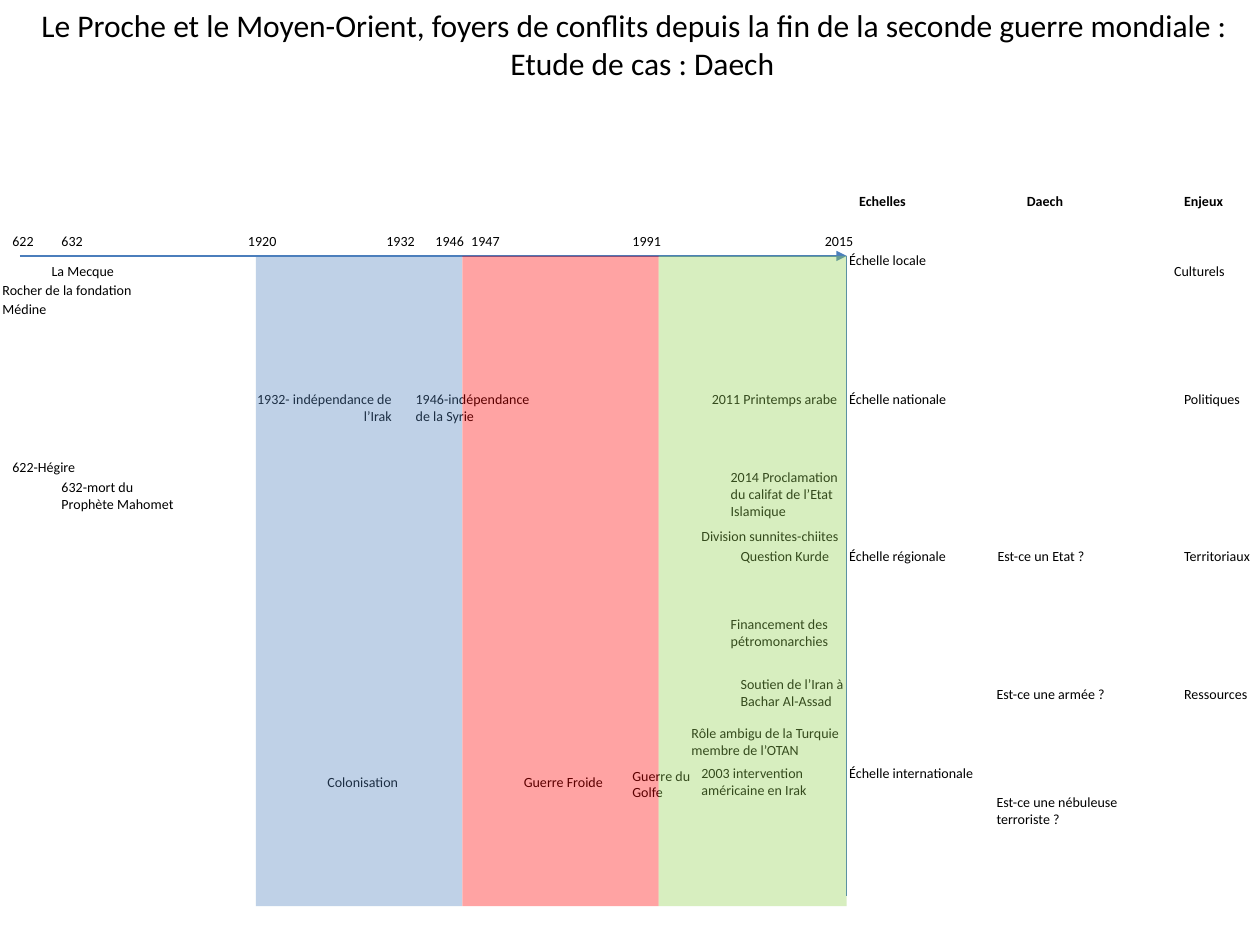
from lxml import etree
from pptx import Presentation
from pptx.dml.color import RGBColor
from pptx.enum.shapes import MSO_CONNECTOR, MSO_SHAPE
from pptx.enum.text import MSO_ANCHOR, MSO_AUTO_SIZE, PP_ALIGN
from pptx.oxml.ns import qn
from pptx.util import Cm, Pt

STRAIGHT = MSO_CONNECTOR.STRAIGHT
RECTANGLE = MSO_SHAPE.RECTANGLE
TOP = MSO_ANCHOR.TOP
FIT_SHAPE = MSO_AUTO_SIZE.SHAPE_TO_FIT_TEXT
LEFT, CENTER, RIGHT = PP_ALIGN.LEFT, PP_ALIGN.CENTER, PP_ALIGN.RIGHT

COLORS = {
    "text": "000000",
    "axis": "4B7EBC",
    "colonisation": "4F81BD",
    "cold_war": "FF0000",
    "today": "92D050",
}
FONT = "Calibri"
LINE_HEIGHT = 0.61
AXIS_START, AXIS_END, AXIS_TOP = 0.4, 17.07, 5.16
BAND_HEIGHT = 13.11

TITLE = [
    ("Le Proche et le Moyen-Orient, foyers de conflits depuis la fin de la seconde guerre mondiale :", LEFT),
    ("Etude de cas : Daech", CENTER),
]
DATES = [("622", 0), ("632", 0.99), ("1920", 4.75), ("1932", 7.54), ("1946", 8.53),
         ("1947", 9.25), ("1991", 12.5), ("2015", 16.38)]
HEADINGS = [("Echelles", 17.07), ("Daech", 20.45), ("Enjeux", 23.62)]
SCALES = [("Échelle locale", 4.95, 2.08), ("Échelle nationale", 7.75, 2.57),
          ("Échelle régionale", 10.92, 2.57), ("Échelle internationale", 15.29, 3.12)]
STAKES = [("Culturels", 23.42, 5.16), ("Politiques", 23.62, 7.75),
          ("Territoriaux", 23.62, 10.92), ("Ressources", 23.62, 13.69)]
SINGLE_LINES = [
    ("Est-ce un Etat ?", 19.86, 10.92, 2.36),
    ("Est-ce une armée ?", 19.84, 13.69, 2.79),
    ("2011 Printemps arabe", 14.1, 7.75, 3.07),
    ("Guerre Froide", 10.31, 15.47, 2.18),
]
EVENTS = [
    ("Est-ce une nébuleuse terroriste ?", 19.84, 15.88, 3.38),
    ("2003 intervention américaine en Irak", 13.89, 15.29, 3.58),
    ("Financement des pétromonarchies", 14.48, 12.29, 2.97),
    ("Soutien de l’Iran à Bachar Al-Assad", 14.68, 13.49, 2.97),
    ("Question Kurde", 14.68, 10.92, 2.97),
    ("2014 Proclamation du califat de l’Etat Islamique", 14.48, 9.32, 2.97),
    ("Division sunnites-chiites", 13.89, 10.52, 3.38),
    ("1946-indépendance de la Syrie", 8.13, 7.75, 2.97),
    ("Colonisation", 6.35, 15.47, 2.97),
    ("632-mort du Prophète Mahomet", 0.99, 9.53, 2.97),
    ("622-Hégire", 0, 9.12, 2.97),
    ("Rôle ambigu de la Turquie membre de l’OTAN", 13.69, 14.48, 3.76),
    ("La Mecque", 0.79, 5.16, 1.78),
    ("Médine", -0.2, 5.94, 1.78),
    ("Rocher de la fondation", -0.2, 5.56, 3.58),
    ("Guerre du Golfe", 12.5, 15.34, 1.78),
]
BANDS = [("colonisation", 5.16, 9.32), ("cold_war", 9.32, 13.28), ("today", 13.28, AXIS_END)]


class TimelinePage:
    """Holds the text style and the current slide, and adds each kind of element."""

    def __init__(self, deck):
        self.page = deck.slides.add_slide(deck.slide_layouts[5])

    def style(self, para, size, align, bold=False):
        para.alignment = align
        for span in para.runs:
            span.font.name = FONT
            span.font.size = Pt(size)
            span.font.bold = bold
            span.font.color.rgb = RGBColor.from_string(COLORS["text"])

    def title(self, lines, left, top, width, height):
        box = self.page.shapes.title
        box.left, box.top, box.width, box.height = Cm(left), Cm(top), Cm(width), Cm(height)
        frame = box.text_frame
        frame.text = "\n".join(text for text, _ in lines)
        frame.vertical_anchor = TOP
        frame.word_wrap = False
        frame.auto_size = FIT_SHAPE
        for para, (_, align) in zip(frame.paragraphs, lines):
            self.style(para, 18, align)

    def label(self, text, left, top, width, wrap=True, bold=False, align=LEFT):
        box = self.page.shapes.add_textbox(Cm(left), Cm(top), Cm(width), Cm(LINE_HEIGHT))
        frame = box.text_frame
        frame.text = text
        frame.word_wrap = wrap
        frame.auto_size = FIT_SHAPE
        self.style(frame.paragraphs[0], 8, align, bold)

    def line(self, x1, y1, x2, y2, arrow=False):
        line = self.page.shapes.add_connector(STRAIGHT, Cm(x1), Cm(y1), Cm(x2), Cm(y2))
        line.line.color.rgb = RGBColor.from_string(COLORS["axis"])
        line.line.width = Pt(0.75)
        if arrow:
            etree.SubElement(line.line._get_or_add_ln(), qn("a:tailEnd"), type="triangle")
        etree.SubElement(line._element.spPr, qn("a:effectLst"))

    def band(self, color, left, right):
        band = self.page.shapes.add_shape(
            RECTANGLE, Cm(left), Cm(AXIS_TOP), Cm(right - left), Cm(BAND_HEIGHT))
        band.shadow.inherit = False
        band.line.fill.background()
        band.fill.solid()
        band.fill.fore_color.rgb = RGBColor.from_string(COLORS[color])
        tint = band._element.spPr.find(".//" + qn("a:srgbClr"))
        etree.SubElement(tint, qn("a:alpha"), val="36000")


def main():
    deck = Presentation()
    deck.slide_width, deck.slide_height = Cm(25.4), Cm(19.05)
    page = TimelinePage(deck)
    page.title(TITLE, 0.58, 0, 24.74, 1.8)
    page.line(AXIS_START, AXIS_TOP, AXIS_END, AXIS_TOP, arrow=True)
    page.line(AXIS_END, AXIS_TOP, AXIS_END, 18.06)
    for year, left in DATES:
        page.label(year, left, 4.57, 0.94 if len(year) == 3 else 1.09, wrap=False)
    for text, top, width in SCALES:
        page.label(text, 16.87, top, width, wrap=False)
    for text, left, top, width in SINGLE_LINES:
        page.label(text, left, top, width, wrap=False)
    for text, left, top, width in EVENTS:
        page.label(text, left, top, width)
    page.label("1932- indépendance de l’Irak", 4.57, 7.75, 3.58, align=RIGHT)
    for text, left, top in STAKES:
        page.label(text, left, top, 2.3)
    for text, left in HEADINGS:
        page.label(text, left, 3.76, 1.78, bold=True)
    for color, left, right in BANDS:
        page.band(color, left, right)
    deck.save("out.pptx")


if __name__ == "__main__":
    main()
